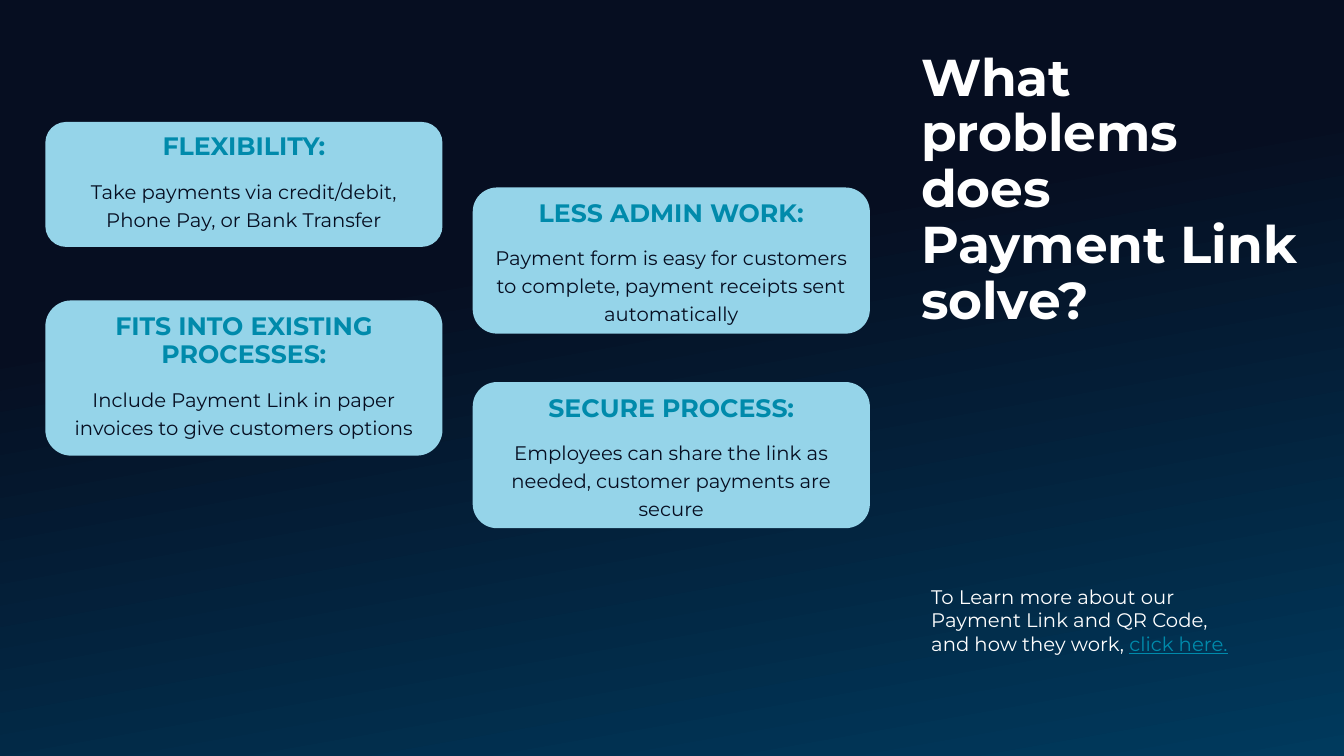
from pptx import Presentation
from pptx.dml.color import RGBColor
from pptx.enum.shapes import MSO_SHAPE
from pptx.enum.text import MSO_ANCHOR, PP_ALIGN
from pptx.util import Pt

TITLE = "What problems does Payment Link solve?"
FOOTER = "To Learn more about our Payment Link and QR Code, and how they work, "
FOOTER_LINK = "click here."
COLUMNS = [
    [
        (87.1, 89.3, "FLEXIBILITY:",
         "Take payments via credit/debit, Phone Pay, or Bank Transfer"),
        (214.6, 110.9, "FITS INTO EXISTING PROCESSES:",
         "Include Payment Link in paper invoices to give customers options"),
    ],
    [
        (133.9, 104.4, "LESS ADMIN WORK:",
         "Payment form is easy for customers to complete, payment receipts sent automatically"),
        (272.9, 104.4, "SECURE PROCESS:",
         "Employees can share the link as needed, customer payments are secure"),
    ],
]

THEME = {
    "font": "Montserrat",
    "navy": RGBColor.from_string("060E21"),
    "blue": RGBColor.from_string("003A5D"),
    "card": RGBColor.from_string("95D4E9"),
    "teal": RGBColor.from_string("008AAB"),
    "white": RGBColor.from_string("FFFFFF"),
    "title": 37,
    "heading": 18,
    "body": 14,
}
LEFT, CARD_WIDTH, COLUMN_STEP = 32.4, 283.7, 305.3


def style_run(r, size, color, bold=False, underline=None):
    font = r.font
    font.name = THEME["font"]
    font.size = Pt(THEME[size])
    font.color.rgb = THEME[color]
    font.bold = bold
    font.underline = underline


def add_text(slide, left, top, width, height):
    tf = slide.shapes.add_textbox(Pt(left), Pt(top), Pt(width), Pt(height)).text_frame
    tf.word_wrap = True
    return tf


def add_card(slide, left, top, height, heading, body):
    sp = slide.shapes.add_shape(MSO_SHAPE.ROUNDED_RECTANGLE,
                                Pt(left), Pt(top), Pt(CARD_WIDTH), Pt(height))
    sp.shadow.inherit = False
    sp.fill.solid()
    sp.fill.fore_color.rgb = THEME["card"]
    sp.line.fill.background()
    tf = sp.text_frame
    tf.word_wrap = True
    tf.vertical_anchor = MSO_ANCHOR.TOP
    tf.text = f"{heading}\n{body}"
    for p in tf.paragraphs:
        p.alignment = PP_ALIGN.CENTER
        p.line_spacing = Pt(20)
    title_p, body_p = tf.paragraphs
    body_p.space_before = Pt(10)
    style_run(title_p.runs[0], "heading", "teal", bold=True)
    style_run(body_p.runs[0], "body", "navy")


def main():
    prs = Presentation()
    prs.slide_width, prs.slide_height = Pt(960), Pt(540)
    slide = prs.slides.add_slide(prs.slide_layouts[6])

    fill = slide.background.fill
    fill.gradient()
    fill.gradient_angle = 280
    for stop, position, color in zip(fill.gradient_stops, (0.35, 1), ("navy", "blue")):
        stop.position = position
        stop.color.rgb = THEME[color]

    for i, cards in enumerate(COLUMNS):
        for card in cards:
            add_card(slide, LEFT + i * COLUMN_STEP, *card)

    tf = add_text(slide, 650.9, 33.1, CARD_WIDTH, 89.3)
    tf.margin_right = 0
    tf.text = TITLE
    p = tf.paragraphs[0]
    p.line_spacing = 0.9
    style_run(p.runs[0], "title", "white", bold=True)

    tf = add_text(slide, 658.1, 414, 232.6, 58.3)
    tf.text = FOOTER
    p = tf.paragraphs[0]
    style_run(p.runs[0], "body", "white")
    r = p.add_run()
    r.text = FOOTER_LINK
    style_run(r, "body", "teal", underline=True)

    prs.save("out.pptx")


if __name__ == "__main__":
    main()
